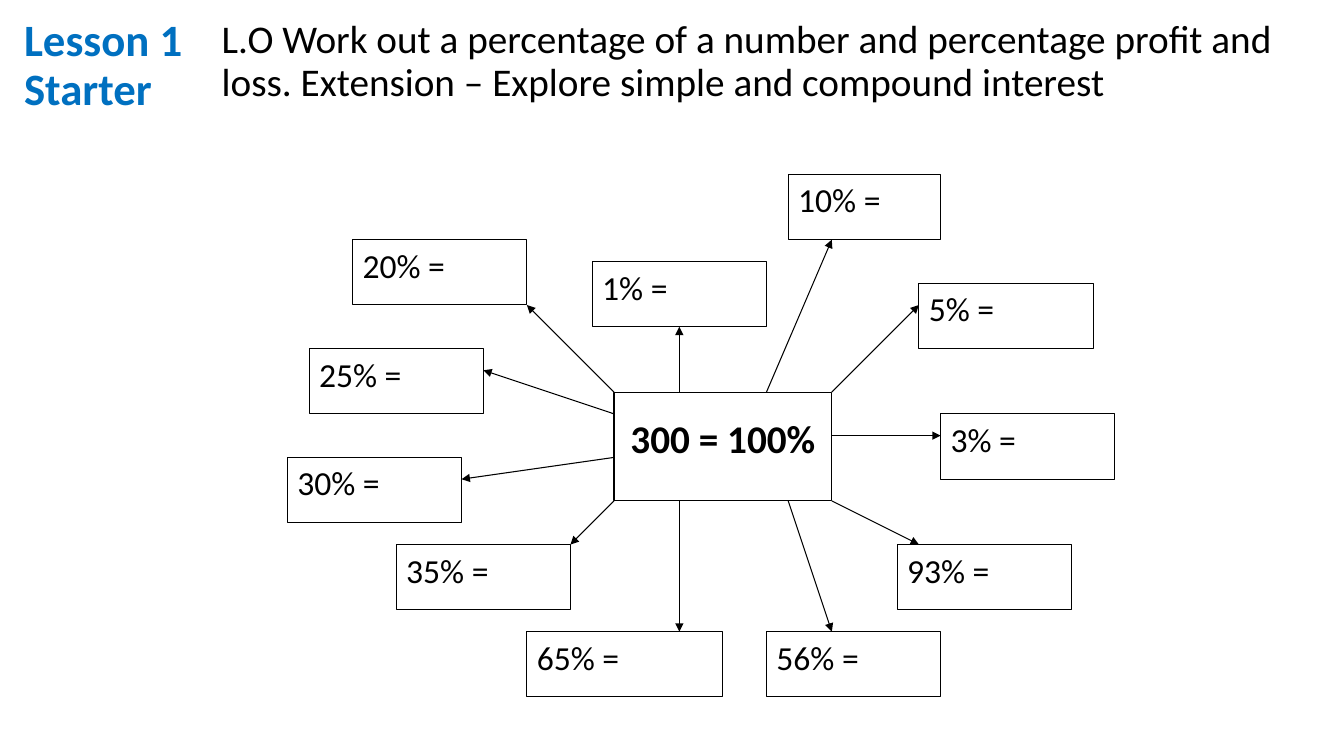
import pptx
import pptx.dml.color
import pptx.enum.shapes
import pptx.enum.text
import pptx.oxml
import pptx.oxml.ns
import pptx.util

Inches = pptx.util.Inches
Pt = pptx.util.Pt
ALIGN = pptx.enum.text.PP_ALIGN
ANCHOR = pptx.enum.text.MSO_ANCHOR
COLOURS = {"heading": "0070C0", "ink": "000000", "paper": "FFFFFF"}
HUB_STEPS = (10, 5)
ANSWER_HEIGHT = 3

# label, (left, top, width), arrow start, arrow end
ANSWERS = [
    ("10% =", (8, -10, 7), (7, 0), (10, -7)),
    ("1% =", (-1, -6, 8), (3, 0), (3, -3)),
    ("20% =", (-12, -7, 8), (0, 0), (-4, -4)),
    ("25% =", (-14, -2, 8), (0, 1), (-6, -1)),
    ("30% =", (-15, 3, 8), (0, 3), (-7, 4)),
    ("35% =", (-10, 7, 8), (0, 5), (-2, 7)),
    ("65% =", (-4, 11, 9), (3, 5), (3, 11)),
    ("56% =", (7, 11, 8), (8, 5), (10, 11)),
    ("93% =", (13, 7, 8), (10, 5), (14, 7)),
    ("3% =", (15, 1, 8), (10, 2), (15, 2)),
    ("5% =", (14, -5, 8), (10, 0), (14, -4)),
]


def colour(name):
    return pptx.dml.color.RGBColor.from_string(COLOURS[name])


def write(shape, text, size, ink="ink", bold=False, align=ALIGN.LEFT,
          anchor=ANCHOR.TOP, spacing=1.0, inset_top=0.05):
    frame = shape.text_frame
    frame.word_wrap = True
    frame.vertical_anchor = anchor
    frame.margin_top = Inches(inset_top)
    para = frame.paragraphs[0]
    para.text = text
    para.alignment = align
    para.line_spacing = spacing
    for span in para.runs:
        span.font.name = "Calibri"
        span.font.size = Pt(size)
        span.font.bold = bold
        span.font.color.rgb = colour(ink)


def add_text(page, box, text, **style):
    write(page.shapes.add_textbox(*map(Inches, box)), text, **style)


def add_framed(page, box, text, **style):
    shape = page.shapes.add_shape(
        pptx.enum.shapes.MSO_SHAPE.RECTANGLE, *map(Inches, box))
    shape.shadow.inherit = False
    shape.fill.solid()
    shape.fill.fore_color.rgb = colour("paper")
    shape.line.color.rgb = colour("ink")
    shape.line.width = Pt(0.75)
    write(shape, text, **style)


def add_arrow(page, start, end):
    arrow = page.shapes.add_connector(
        pptx.enum.shapes.MSO_CONNECTOR.STRAIGHT, *map(Inches, start + end))
    arrow.line.color.rgb = colour("ink")
    arrow.line.width = Pt(0.75)
    namespace = pptx.oxml.ns.nsdecls("a")
    arrow.line._get_or_add_ln().append(
        pptx.oxml.parse_xml(f'<a:tailEnd {namespace} type="triangle"/>'))
    arrow._element.spPr.append(pptx.oxml.parse_xml(f"<a:effectLst {namespace}/>"))


def add_header(page, box):
    left, top, width, height = box
    add_text(page, (left, top, 1.89, 1.08), "Lesson 1\vStarter", size=32,
             ink="heading", bold=True, anchor=ANCHOR.MIDDLE, spacing=0.9)
    add_text(page, (left + 1.96, top + 0.03, width - 1.96, height - 0.03),
             "L.O Work out a percentage of a number and percentage profit and loss. "
             "Extension – Explore simple and compound interest",
             size=28, spacing=0.9)


def add_percentage_web(page, hub):
    left, top, width, height = hub
    step_x, step_y = width / HUB_STEPS[0], height / HUB_STEPS[1]

    def point(column, row):
        return left + column * step_x, top + row * step_y

    add_framed(page, hub, "300 = 100%", size=28, bold=True,
               align=ALIGN.CENTER, inset_top=0.22)
    for label, (column, row, columns), start, end in ANSWERS:
        box = point(column, row) + (columns * step_x, ANSWER_HEIGHT * step_y)
        add_framed(page, box, label, size=24)
        add_arrow(page, point(*start), point(*end))


def main():
    deck = pptx.Presentation()
    deck.slide_width, deck.slide_height = Inches(13.33), Inches(7.5)
    page = deck.slides.add_slide(deck.slide_layouts[6])
    add_header(page, (0.14, 0.12, 12.94, 1.18))
    add_percentage_web(page, (6.09, 3.89, 2.16, 1.08))
    deck.save("out.pptx")


if __name__ == "__main__":
    main()
